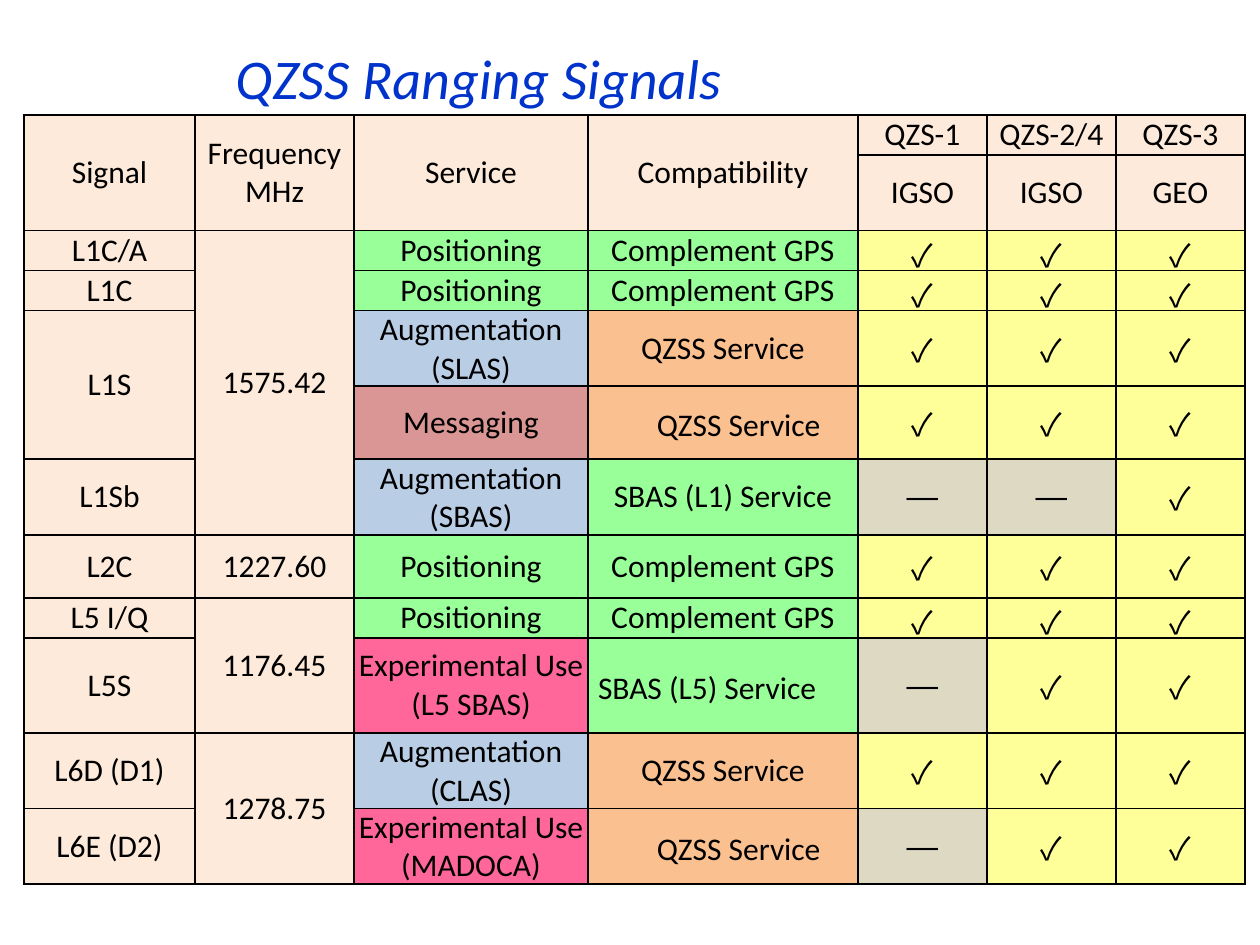
from pptx import Presentation
from pptx.dml.color import RGBColor
from pptx.enum.text import MSO_ANCHOR, MSO_AUTO_SIZE, PP_ALIGN
from pptx.oxml import parse_xml
from pptx.oxml.ns import nsdecls
from pptx.util import Pt

PX = 914400 // 126
THEME = {
    "title": "0033CC", "text": "000000", "head": "FDEADA",
    "title_size": 32, "size": 18, "line": 12700,
    "font": "Calibri", "check_font": "Noto Sans CJK JP", "dash_font": "Arial",
    "fills": {
        "Positioning": "99FF99", "Complement": "99FF99", "SBAS": "99FF99",
        "Augmentation": "B9CDE5", "Messaging": "D99694",
        "Experimental": "FF6699", "QZSS": "FAC090",
        "✓": "FFFF99", "—": "DDD9C3",
    },
}


def style(run, size, color, font):
    run.font.size = Pt(size)
    run.font.name = font
    run.font.color.rgb = RGBColor.from_string(color)


def border(cell):
    props = cell._tc.get_or_add_tcPr()
    for spot, side in enumerate("LRTB"):
        props.insert(spot, parse_xml(
            f'<a:ln{side} {nsdecls("a")} w="{THEME["line"]}"><a:solidFill>'
            f'<a:srgbClr val="{THEME["text"]}"/></a:solidFill></a:ln{side}>'))


deck = Presentation()
deck.slide_width, deck.slide_height = 1260 * PX, 945 * PX
slide = deck.slides.add_slide(deck.slide_layouts[6])

title = slide.shapes.add_textbox(223 * PX, 37 * PX, 517 * PX, 81 * PX)
frame = title.text_frame
frame.word_wrap = False
frame.auto_size = MSO_AUTO_SIZE.SHAPE_TO_FIT_TEXT
frame.text = "QZSS Ranging Signals"
run = frame.paragraphs[0].runs[0]
style(run, THEME["title_size"], THEME["title"], THEME["font"])
run.font.italic = True

rows = [
    (40, "Signal", "Frequency\nMHz", "Service", "Compatibility", "QZS-1", "QZS-2/4", "QZS-3"),
    (40, None, None, None, None, "IGSO", "IGSO", "GEO"),
    (40, "L1C/A", "1575.42", "Positioning", "Complement GPS", "✓", "✓", "✓"),
    (40, "L1C", None, "Positioning", "Complement GPS", "✓", "✓", "✓"),
    (73, "L1S", None, "Augmentation\v(SLAS)", "QZSS Service", "✓", "✓", "✓"),
    (73, None, None, "Messaging", "　QZSS Service", "✓", "✓", "✓"),
    (63, "L1Sb", None, "Augmentation\n(SBAS)", "SBAS (L1) Service", "—", "—", "✓"),
    (63, "L2C", "1227.60", "Positioning", "Complement GPS", "✓", "✓", "✓"),
    (40, "L5 I/Q", "1176.45", "Positioning", "Complement GPS", "✓", "✓", "✓"),
    (95, "L5S", None, "Experimental Use (L5 SBAS)", "SBAS (L5) Service　", "—", "✓", "✓"),
    (73, "L6D (D1)", "1278.75", "Augmentation\v(CLAS)", "QZSS Service", "✓", "✓", "✓"),
    (73, "L6E (D2)", None, "Experimental Use (MADOCA)", "　QZSS Service", "—", "✓", "✓"),
]
widths = [171, 159, 234, 270, 129, 129, 129]
high = sum(row[0] for row in rows)
grid = slide.shapes.add_table(len(rows), len(widths), 24 * PX, 115 * PX,
                              sum(widths) * PX, high * PX).table
grid.first_row = grid.horz_banding = False
for col, width in zip(grid.columns, widths):
    col.width = width * PX

for r, (height, *texts) in enumerate(rows):
    grid.rows[r].height = height * PX
    for c, text in enumerate(texts):
        cell = grid.cell(r, c)
        cell.margin_left = cell.margin_right = 0
        cell.margin_top = cell.margin_bottom = 0
        cell.vertical_anchor = MSO_ANCHOR.MIDDLE
        cell.text = text or ""
        word = text.split()[0] if text else ""
        cell.fill.solid()
        cell.fill.fore_color.rgb = RGBColor.from_string(
            THEME["fills"].get(word, THEME["head"]))
        border(cell)
        font = {"✓": THEME["check_font"], "—": THEME["dash_font"]}.get(word, THEME["font"])
        for para in cell.text_frame.paragraphs:
            para.alignment = PP_ALIGN.CENTER
            for run in para.runs:
                style(run, THEME["size"], THEME["text"], font)

for c in range(len(widths)):
    starts = [r for r, row in enumerate(rows) if row[c + 1] is not None]
    for top, end in zip(starts, starts[1:] + [len(rows)]):
        if end - top > 1:
            grid.cell(top, c).merge(grid.cell(end - 1, c))

deck.save("out.pptx")
